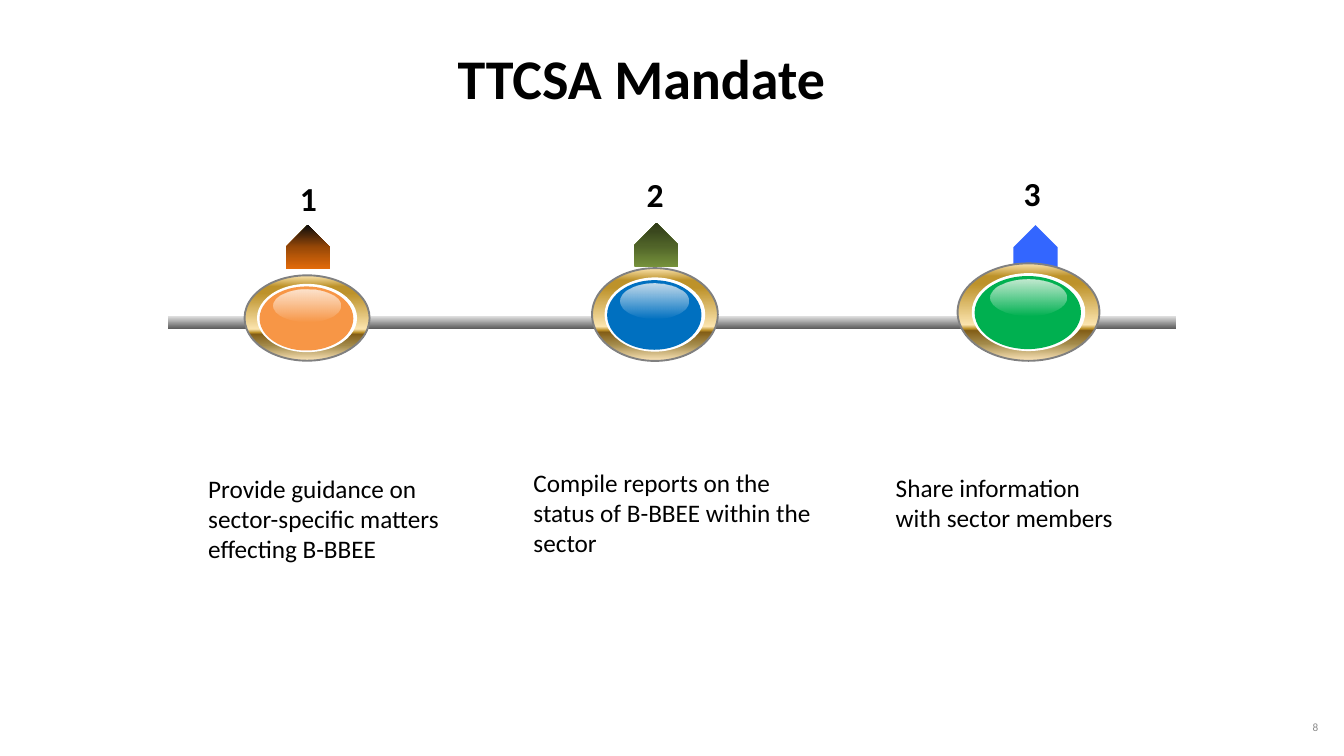
import pptx
import pptx.dml.color
import pptx.enum.shapes
import pptx.enum.text
import pptx.oxml.ns
import pptx.util
from lxml import etree

Pt = pptx.util.Pt
Kind = pptx.enum.shapes.MSO_SHAPE
Align = pptx.enum.text.PP_ALIGN
Anchor = pptx.enum.text.MSO_ANCHOR
qn = pptx.oxml.ns.qn

FONT = "Calibri"
HEX = {
    "black": "000000", "white": "FFFFFF", "gray": "808080", "number": "8C8C8C",
    "orange": "F79646", "blue": "0070C0", "green": "00B050", "arrow": "3366FF",
    "pale": "F1F1F1", "light": "DEDEDE", "dark": "5F5F5F", "shine": "FFFCF9",
    "rust": "E46C0A", "brown": "984807", "soot": "0D0D0D",
    "moss": "77933C", "olive": "4F6228", "pine": "2E3917",
    "cream": "FBE4AE", "gold": "BD922A", "bronze": "835E17",
    "khaki": "A28949", "sand": "FAE3B7",
}
# Gradient stops: position and colour, then opacity where it is not full.
GOLD = [(0, "cream"), (13, "gold"), (21, "gold"), (63, "cream"),
        (67, "gold"), (69, "bronze"), (82, "khaki"), (100, "sand")]
GLOSS = [(0, "shine", 77), (100, "white", 0)]
RUST = [(0, "rust"), (50, "brown"), (100, "soot")]
MOSS = [(0, "moss"), (50, "olive"), (100, "pine")]

# Number, bead box, bead colour, arrow corner and fill, label corner,
# caption box, caption
STEPS = [
    ("1", (262, 295, 134, 91.5), "orange", (306, 241.2), RUST, (314, 187),
     (216, 503.3, 315.4, 105),
     "Provide guidance on sector-specific matters effecting B-BBEE"),
    ("2", (634.3, 287.3, 134.8, 99.4), "blue", (679.7, 239), MOSS, (685.4, 183),
     (564.5, 496.8, 324.7, 105),
     "Compile reports on the status of B-BBEE within the sector"),
    ("3", (1026, 282.2, 152, 104.4), "green", (1085.8, 241.2), "arrow",
     (1089.4, 181.5), (952.6, 502.6, 265.7, 72.7),
     "Share information with sector members"),
]


def color(name):
    return pptx.dml.color.RGBColor.from_string(HEX[name])


def paint(shape, fill, angle):
    """Fill with one colour name or with a list of gradient stops."""
    if isinstance(fill, str):
        shape.fill.solid()
        shape.fill.fore_color.rgb = color(fill)
        return
    shape.fill.gradient()
    shape.fill.gradient_angle = -angle % 360
    stops = shape.element.spPr.find(".//" + qn("a:gsLst"))
    for old in list(stops):
        stops.remove(old)
    for pos, name, *alpha in fill:
        stop = etree.SubElement(stops, qn("a:gs"), pos=str(pos * 1000))
        tint = etree.SubElement(stop, qn("a:srgbClr"), val=HEX[name])
        for part in alpha:
            etree.SubElement(tint, qn("a:alpha"), val=str(part * 1000))


def add_form(slide, kind, box, fill, angle=90):
    shape = slide.shapes.add_shape(kind, *map(Pt, box))
    shape.shadow.inherit = False
    shape.line.fill.background()
    paint(shape, fill, angle)
    return shape


def write(frame, text, size, align=Align.LEFT, bold=False, tone="black"):
    frame.text = text
    para = frame.paragraphs[0]
    para.alignment = align
    font = para.runs[0].font
    font.name, font.size, font.bold = FONT, Pt(size), bold
    font.color.rgb = color(tone)


def add_text(slide, box, text, size, wrap=True, **style):
    frame = slide.shapes.add_textbox(*map(Pt, box)).text_frame
    frame.word_wrap = wrap
    write(frame, text, size, **style)
    return frame


def add_title(slide, box):
    title = slide.shapes.title
    title.left, title.top, title.width, title.height = map(Pt, box)
    frame = title.text_frame
    frame.auto_size = pptx.enum.text.MSO_AUTO_SIZE.NONE
    frame.vertical_anchor = Anchor.MIDDLE
    write(frame, "TTCSA Mandate ", 60, Align.CENTER, True)


def add_rail(slide, box):
    left, top, width, height = box
    add_form(slide, Kind.RECTANGLE, (left, top + 4, width, 5),
             [(0, "gray"), (100, "pale")])
    add_form(slide, Kind.RECTANGLE, box, [(0, "light"), (100, "dark")])


def add_bead(slide, box, tone):
    """Gold ring, white rim, coloured face and gloss, as shares of the box."""
    left, top, width, height = box
    ring = add_form(slide, Kind.OVAL, box, GOLD)
    ring.line.color.rgb = color("gray")
    ring.line.width = Pt(2)
    layers = [(0.1, 0.1, 0.8, 0.8, "white"),
              (0.12, 0.13, 0.75, 0.75, tone),
              (0.23, 0.17, 0.54, 0.37, GLOSS)]
    for x, y, w, h, fill in layers:
        part = (left + x * width, top + y * height, w * width, h * height)
        add_form(slide, Kind.OVAL, part, fill)


def add_step(slide, label, bead, tone, arrow, fill, spot, area, text):
    pointer = add_form(slide, Kind.PENTAGON, (*arrow, 47.5, 47.5), fill, 0)
    pointer.rotation = 270
    add_bead(slide, bead, tone)
    add_text(slide, (*spot, 33, 51), label, 36, wrap=False,
             align=Align.CENTER, bold=True)
    add_text(slide, area, text, 27)


def add_page(slide, box):
    frame = add_text(slide, box, "8", 12, align=Align.RIGHT, tone="number")
    frame.vertical_anchor = Anchor.MIDDLE


def main():
    deck = pptx.Presentation()
    deck.slide_width, deck.slide_height = Pt(1440), Pt(810)
    slide = deck.slides.add_slide(deck.slide_layouts[5])
    add_rail(slide, (180, 339, 1080, 13))
    for step in STEPS:
        add_step(slide, *step)
    add_title(slide, (388, 42.5, 612, 80.5))
    add_page(slide, (1251.4, 764.6, 168, 29))
    deck.save("out.pptx")


if __name__ == "__main__":
    main()
